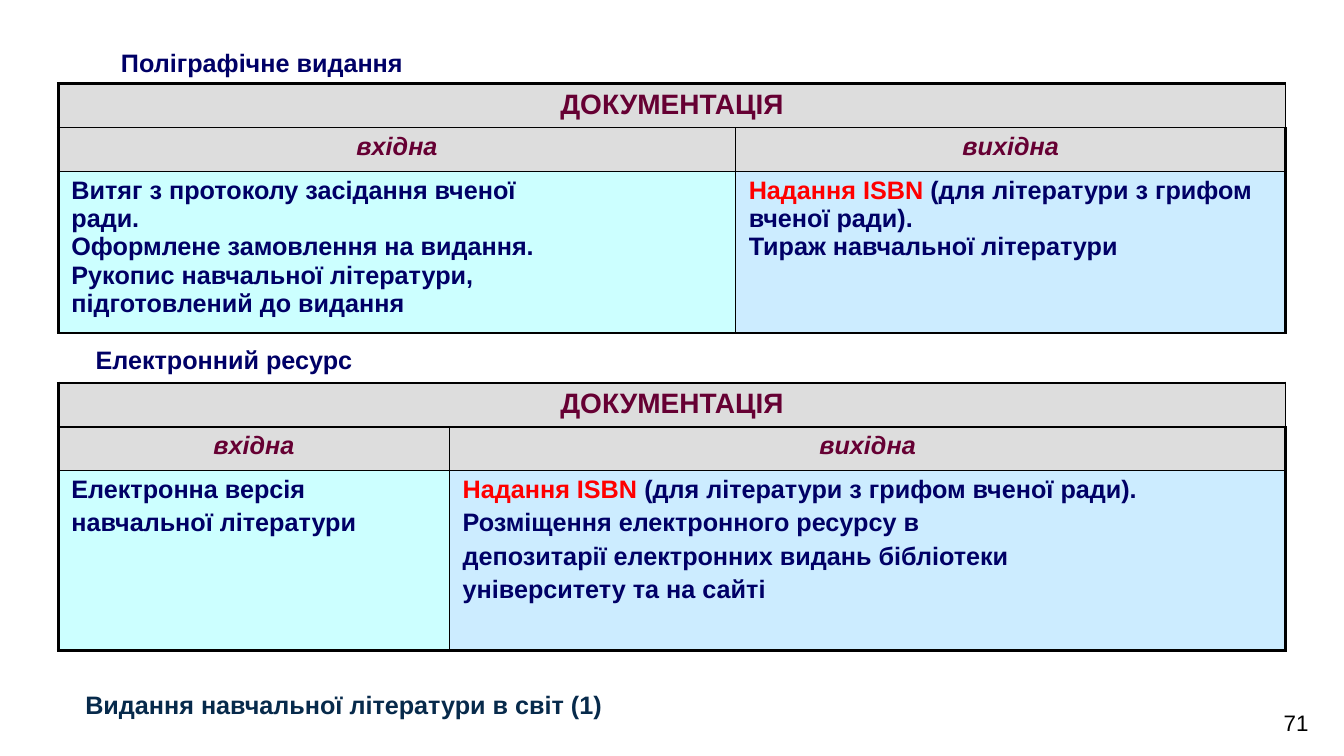
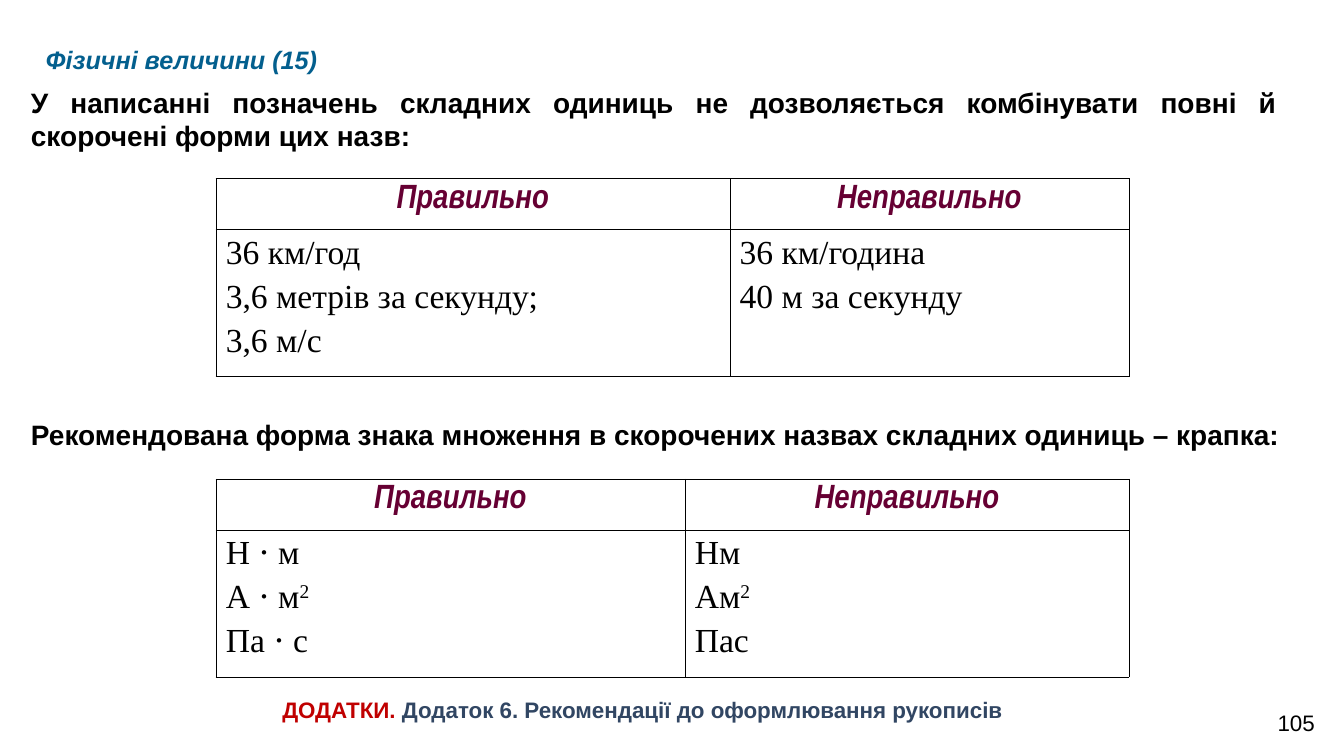
from pptx import Presentation
from pptx import util as u
from pptx.dml.color import RGBColor
from pptx.enum import text
from pptx.oxml import parse_xml
from pptx.oxml.ns import nsdecls

NAVY, PLUM, RED, BLACK = "000066", "660033", "FF0000", "000000"
GREY, AQUA, SKY = "DDDDDD", "CCFFFF", "CCECFF"
LEFT, CENTER, JUSTIFY = (text.PP_ALIGN.LEFT, text.PP_ALIGN.CENTER,
                         text.PP_ALIGN.JUSTIFY)
TOP, MIDDLE = text.MSO_ANCHOR.TOP, text.MSO_ANCHOR.MIDDLE


def style(size, color, bold=True, italic=False, name="Arial"):
    return {"size": u.Pt(size), "color": color, "bold": bold,
            "italic": italic, "name": name}


LABEL = style(18, NAVY)
HEADING = style(20, PLUM)
SUBHEADING = style(18, PLUM, italic=True)
STATEMENT = style(20, BLACK)
VERDICT = style(24, PLUM, italic=True, name="Arial Narrow")
EXAMPLE = style(24, BLACK, bold=False, name="Times New Roman")
NUMBER = style(16, BLACK, bold=False)
FOOTER = style(16, "C00000")
SUPERSCRIPT = {"superscript": True}

# A paragraph is a string or a list of (text, format changes) runs.
# A text box is (left, top, width, height), paragraph, style, alignment, anchor.
# Lengths are in centimetres.
DOCUMENT_TABLE = {
    "left": 1.47, "width": 30.93, "margins": (0.33, 0.13),
    "borders": (2.25, 1),
    "styles": [HEADING, SUBHEADING, LABEL],
    "fills": [(GREY, GREY), (GREY, GREY), (AQUA, SKY)],
}
DOCUMENT_HEAD = [[["ДОКУМЕНТАЦІЯ"]], [["вхідна"], ["вихідна"]]]
UNIT_TABLE = {
    "left": 5.44, "width": 23.01, "margins": (0.25, 0.13),
    "borders": (0.25, 0.25), "heights": (1.27, 3.71), "spacing": 0.2,
    "styles": [VERDICT, EXAMPLE],
    "fills": [(None, None), (None, None)],
}
UNIT_HEAD = [[["Правильно"], ["Неправильно"]]]

SLIDES = [
    {
        "number": "71",
        "texts": [
            ((1.9, 17.25, 20.07, 1.02), "Видання навчальної літератури в світ (1)",
             style(18, "072A4B"), LEFT, TOP),
            ((2.8, 1.07, 16.93, 1.02), "Поліграфічне видання", LABEL, LEFT, TOP),
            ((2.16, 8.56, 16.93, 1.02), "Електронний ресурс", LABEL, LEFT, TOP),
        ],
        "tables": [
            DOCUMENT_TABLE | {
                "top": 2.11, "first_column": 17.07, "spacing": 0,
                "heights": (1.1, 1.1, 4.07),
                "rows": DOCUMENT_HEAD + [[
                    ["Витяг з протоколу засідання вченої",
                     "ради.",
                     "Оформлене замовлення на видання.",
                     "Рукопис навчальної літератури,",
                     "підготовлений до видання"],
                    [[("Надання ISBN", {"color": RED}),
                      (" (для літератури з грифом вченої ради).", {})],
                     "Тираж навчальної літератури"],
                ]],
            },
            DOCUMENT_TABLE | {
                "top": 9.65, "first_column": 9.86, "spacing": 0.2,
                "heights": (1.1, 1.1, 4.53),
                "rows": DOCUMENT_HEAD + [[
                    ["Електронна версія", "навчальної літератури"],
                    [[("Надання ISBN ", {"color": RED}),
                      ("(для літератури з грифом вченої ради).", {})],
                     "Розміщення електронного ресурсу в",
                     "депозитарії електронних видань бібліотеки",
                     "університету та на сайті"],
                ]],
            },
        ],
    },
    {
        "number": "105",
        "texts": [
            ((2.39, 17.42, 27.61, 0.94),
             [("ДОДАТКИ. ", {}),
              ("Додаток 6. Рекомендації до оформлювання рукописів",
               {"color": "314663"})],
             FOOTER, CENTER, TOP),
            ((0.91, 1, 27.84, 1.02), "Фізичні величини (15)",
             style(18, "035F8E", italic=True), LEFT, TOP),
            ((0.53, 2.01, 31.9, 1.96),
             "У написанні позначень складних одиниць не дозволяється "
             "комбінувати повні й скорочені форми цих назв:",
             STATEMENT, JUSTIFY, MIDDLE),
            ((0.53, 10.39, 32.33, 1.12),
             "Рекомендована форма знака множення в скорочених назвах "
             "складних одиниць – крапка:",
             STATEMENT, JUSTIFY, MIDDLE),
        ],
        "tables": [
            UNIT_TABLE | {
                "top": 4.5, "first_column": 12.95,
                "rows": UNIT_HEAD + [[
                    ["36 км/год", "3,6 метрів за секунду;", "3,6 м/с"],
                    ["36 км/година", "40 м за секунду"],
                ]],
            },
            UNIT_TABLE | {
                "top": 12.07, "first_column": 11.82,
                "rows": UNIT_HEAD + [[
                    ["Н ⋅ м", [("А ⋅ м", {}), ("2", SUPERSCRIPT)], "Па ⋅ с"],
                    ["Нм", [("Ам", {}), ("2", SUPERSCRIPT)], "Пас"],
                ]],
            },
        ],
    },
]


def rgb(value):
    return RGBColor.from_string(value)


def format_run(run, values):
    for key, value in values.items():
        if key == "color":
            run.font.color.rgb = rgb(value)
        elif key == "superscript":
            run._r.get_or_add_rPr().set("baseline", "30000")
        else:
            setattr(run.font, key, value)


def write(frame, paragraphs, base, alignment, spacing=0):
    """Fill a text frame; spacing is the gap between paragraphs in font sizes."""
    for index, content in enumerate(paragraphs):
        paragraph = frame.add_paragraph() if index else frame.paragraphs[0]
        paragraph.alignment = alignment
        if index and spacing:
            paragraph.space_before = u.Pt(round(base["size"].pt * spacing, 1))
        runs = [(content, {})] if isinstance(content, str) else content
        for words, changes in runs:
            run = paragraph.add_run()
            run.text = words
            format_run(run, base | changes)


def add_text(slide, box, content, base, alignment, anchor):
    frame = slide.shapes.add_textbox(*map(u.Cm, box)).text_frame
    frame.word_wrap = True
    frame.auto_size = text.MSO_AUTO_SIZE.SHAPE_TO_FIT_TEXT
    frame.vertical_anchor = anchor
    write(frame, [content], base, alignment)


def set_borders(cell, widths):
    """Draw the left, right, top and bottom lines, with widths in points."""
    properties = cell._tc.get_or_add_tcPr()
    for side, width in zip("LRTB", widths):
        properties.append(parse_xml(
            f'<a:ln{side} {nsdecls("a")} w="{u.Pt(width)}"><a:solidFill>'
            f'<a:srgbClr val="{BLACK}"/></a:solidFill></a:ln{side}>'))


def format_cell(cell, fill, margins, widths):
    set_borders(cell, widths)
    if fill:
        cell.fill.solid()
        cell.fill.fore_color.rgb = rgb(fill)
    else:
        cell.fill.background()
    horizontal, vertical = map(u.Cm, margins)
    for side, margin in {"left": horizontal, "right": horizontal,
                         "top": vertical, "bottom": vertical}.items():
        setattr(cell, f"margin_{side}", margin)


def add_table(slide, data):
    heights, rows = data["heights"], data["rows"]
    columns = (data["first_column"], data["width"] - data["first_column"])
    box = (data["left"], data["top"], data["width"], sum(heights))
    table = slide.shapes.add_table(len(rows), len(columns),
                                   *map(u.Cm, box)).table
    table.first_row = table.horz_banding = False
    for column, width in zip(table.columns, columns):
        column.width = u.Cm(width)
    outer, inner = data["borders"]
    last_row, last_column = len(rows) - 1, len(columns) - 1
    for i, contents in enumerate(rows):
        table.rows[i].height = u.Cm(heights[i])
        for j in range(len(columns)):
            at_edge = (j == 0, j == last_column, i == 0, i == last_row)
            format_cell(table.cell(i, j), data["fills"][i][j], data["margins"],
                        [outer if edge else inner for edge in at_edge])
        if len(contents) == 1:
            table.cell(i, 0).merge(table.cell(i, last_column))
        for j, paragraphs in enumerate(contents):
            write(table.cell(i, j).text_frame, paragraphs, data["styles"][i],
                  LEFT if i == last_row else CENTER, data["spacing"])


def main():
    presentation = Presentation()
    presentation.slide_width = u.Cm(33.87)
    presentation.slide_height = u.Cm(19.05)
    for content in SLIDES:
        slide = presentation.slides.add_slide(presentation.slide_layouts[6])
        add_text(slide, (31.85, 17.75, 1.63, 0.94), content["number"],
                 NUMBER, CENTER, TOP)
        for item in content["texts"]:
            add_text(slide, *item)
        for data in content["tables"]:
            add_table(slide, data)
    presentation.save("out.pptx")


if __name__ == "__main__":
    main()
